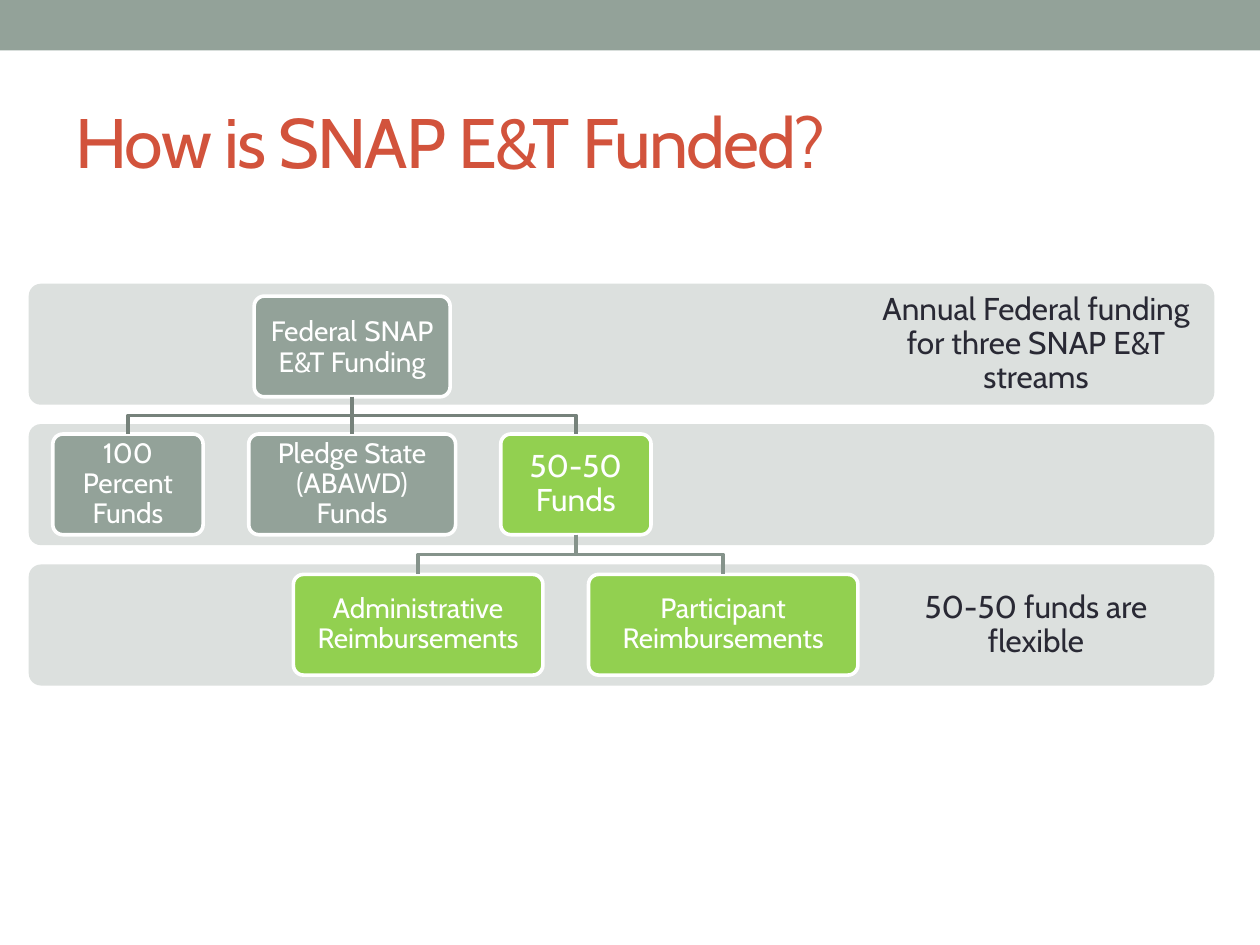
import pptx
import pptx.dml.color
import pptx.enum.shapes
import pptx.enum.text
import pptx.oxml.ns
import pptx.util
from lxml import etree

Cm = pptx.util.Cm
Pt = pptx.util.Pt
SHAPES = pptx.enum.shapes.MSO_SHAPE
ALIGN = pptx.enum.text.PP_ALIGN

SAGE, GREEN, GREY, WHITE = "93A299", "92D050", "DCE0DE", "FFFFFF"
RED, INK, DARK_LINE, LIGHT_LINE = "D2533C", "292934", "76827B", "85938B"
BAND_LEFT, BAND_WIDTH, BAND_HEIGHT = 0.58, 23.9, 2.44
BAND_TOPS = [5.72 + row * 2.83 for row in range(3)]
BOX_HEIGHT = 2.03


def color(hex_string):
    return pptx.dml.color.RGBColor.from_string(hex_string)


class FundingSlide:
    """Draws styled elements on the current slide."""

    font = "Cabin"
    line_width = Pt(2.08)

    def __init__(self, slide):
        self.slide = slide

    def label(self, shape, runs, hex_color, inset, align=ALIGN.CENTER, line_spacing=0.9, tracking=None):
        frame = shape.text_frame
        frame.word_wrap = True
        frame.vertical_anchor = pptx.enum.text.MSO_ANCHOR.MIDDLE
        frame.margin_left = frame.margin_right = Cm(inset)
        frame.margin_top = frame.margin_bottom = Cm(inset)
        paragraph = frame.paragraphs[0]
        paragraph.alignment = align
        paragraph.line_spacing = line_spacing
        for text, size in runs:
            run = paragraph.add_run()
            run.text = text
            run.font.name = self.font
            run.font.size = Pt(size)
            run.font.color.rgb = color(hex_color)
            if tracking is not None:
                run.font._element.set("spc", str(tracking))

    def panel(self, kind, left, top, width, height, fill):
        shape = self.slide.shapes.add_shape(kind, Cm(left), Cm(top), Cm(width), Cm(height))
        shape.shadow.inherit = False
        shape.fill.solid()
        shape.fill.fore_color.rgb = color(fill)
        shape.line.fill.background()
        if kind == SHAPES.ROUNDED_RECTANGLE:
            shape.adjustments[0] = 0.1
        return shape

    def text(self, left, top, width, height, runs, hex_color, inset, **style):
        shape = self.slide.shapes.add_textbox(Cm(left), Cm(top), Cm(width), Cm(height))
        self.label(shape, runs, hex_color, inset, **style)

    def box(self, center, top, width, fill, runs):
        shape = self.panel(SHAPES.ROUNDED_RECTANGLE, center - width / 2, top, width, BOX_HEIGHT, fill)
        shape.line.color.rgb = color(WHITE)
        shape.line.width = self.line_width
        self.label(shape, runs, WHITE, 0.24)
        return shape

    def branch(self, parent, child, hex_color):
        start_x = parent.left + parent.width // 2
        start_y = parent.top + parent.height
        end_x = child.left + child.width // 2
        middle_y = (start_y + child.top) // 2
        builder = self.slide.shapes.build_freeform(start_x, start_y)
        builder.add_line_segments(
            [(start_x, middle_y), (end_x, middle_y), (end_x, child.top)], close=False)
        shape = builder.convert_to_shape()
        shape.shadow.inherit = False
        shape.fill.background()
        shape.line.color.rgb = color(hex_color)
        shape.line.width = self.line_width

    def stem(self, parent, child, hex_color):
        connector = self.slide.shapes.add_connector(
            pptx.enum.shapes.MSO_CONNECTOR.STRAIGHT, 0, 0, 0, 0)
        connector.begin_connect(parent, 2)
        connector.end_connect(child, 0)
        connector.line.color.rgb = color(hex_color)
        connector.line.width = self.line_width
        etree.SubElement(connector._element.spPr, pptx.oxml.ns.qn("a:effectLst"))


def main():
    presentation = pptx.Presentation()
    presentation.slide_width, presentation.slide_height = Cm(25.4), Cm(19.05)
    page = FundingSlide(presentation.slides.add_slide(presentation.slide_layouts[6]))

    page.panel(SHAPES.RECTANGLE, 0, 0, 25.4, 1.02, SAGE)
    page.text(1.27, 1.47, 22.86, 2.74, [("How is SNAP E&T Funded?", 40)], RED, 0.25,
              align=ALIGN.LEFT, line_spacing=1.0, tracking=-100)

    for top in BAND_TOPS:
        page.panel(SHAPES.ROUNDED_RECTANGLE, BAND_LEFT, top, BAND_WIDTH, BAND_HEIGHT, GREY)
    notes = [(BAND_TOPS[0], "Annual Federal funding for three SNAP E&T streams"),
             (BAND_TOPS[2], "50-50 funds are flexible")]
    for top, note in notes:
        page.text(17.3, top, 7.17, BAND_HEIGHT, [(note, 18)], INK, 0.36)

    federal = page.box(7.1, BAND_TOPS[0] + 0.25, 3.95, SAGE,
                       [("Federal", 16), (" ", 18), ("SNAP E&T Funding", 16)])
    stream_top, use_top = (top + 0.2 for top in BAND_TOPS[1:])
    full = page.box(2.58, stream_top, 3.03, SAGE, [("100 Percent Funds", 16)])
    pledge = page.box(7.1, stream_top, 4.17, SAGE, [("Pledge State (ABAWD) Funds", 16)])
    half = page.box(11.61, stream_top, 3.03, GREEN, [("50-50 Funds", 18)])
    administrative = page.box(8.43, use_top, 5.03, GREEN, [("Administrative Reimbursements", 16)])
    participant = page.box(14.58, use_top, 5.43, GREEN, [("Participant Reimbursements", 16)])

    page.stem(federal, pledge, DARK_LINE)
    for stream in (full, half):
        page.branch(federal, stream, DARK_LINE)
    for use in (administrative, participant):
        page.branch(half, use, LIGHT_LINE)

    presentation.save("out.pptx")


if __name__ == "__main__":
    main()
